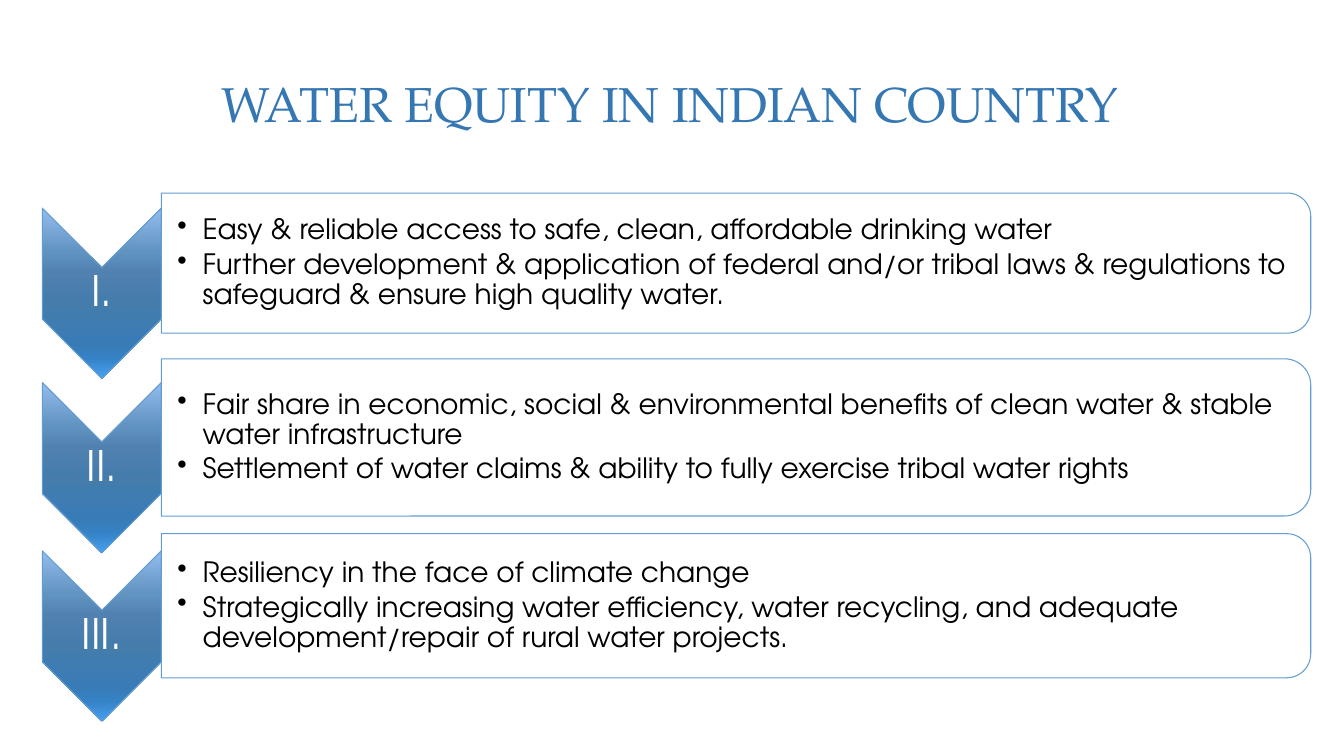
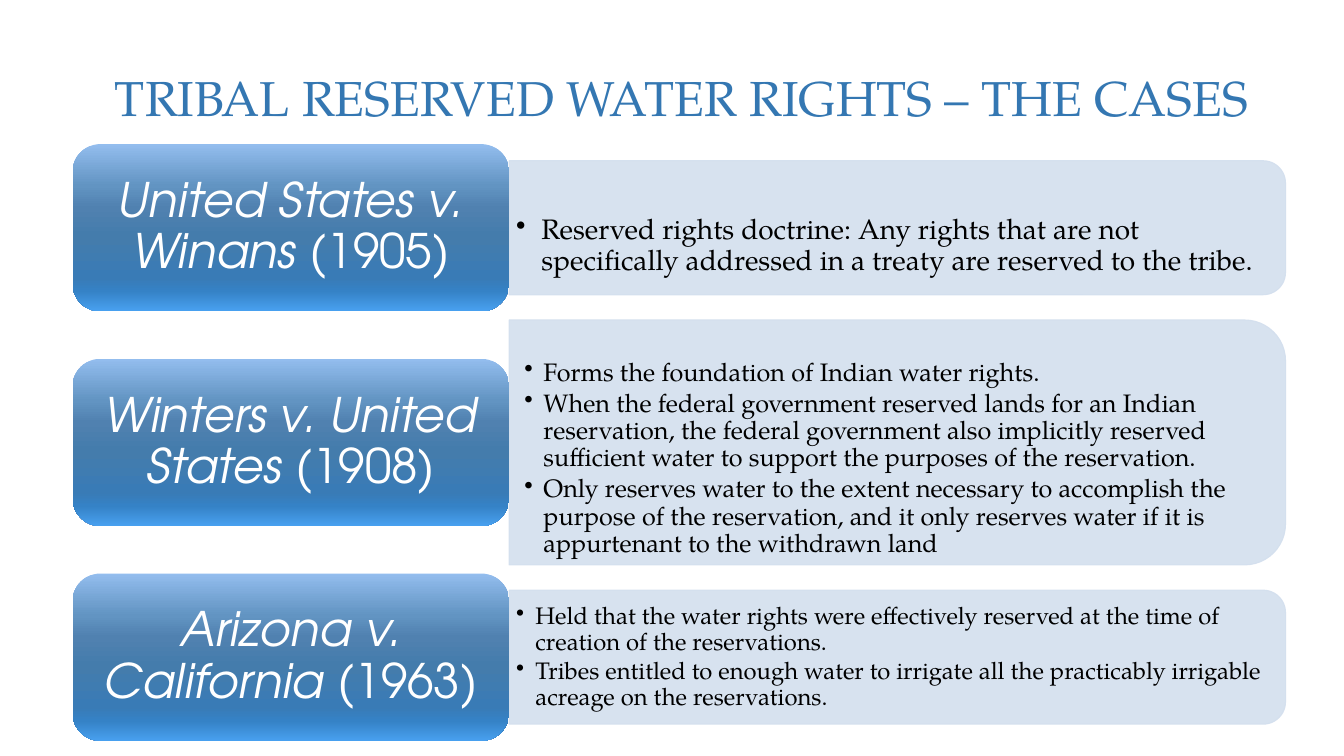
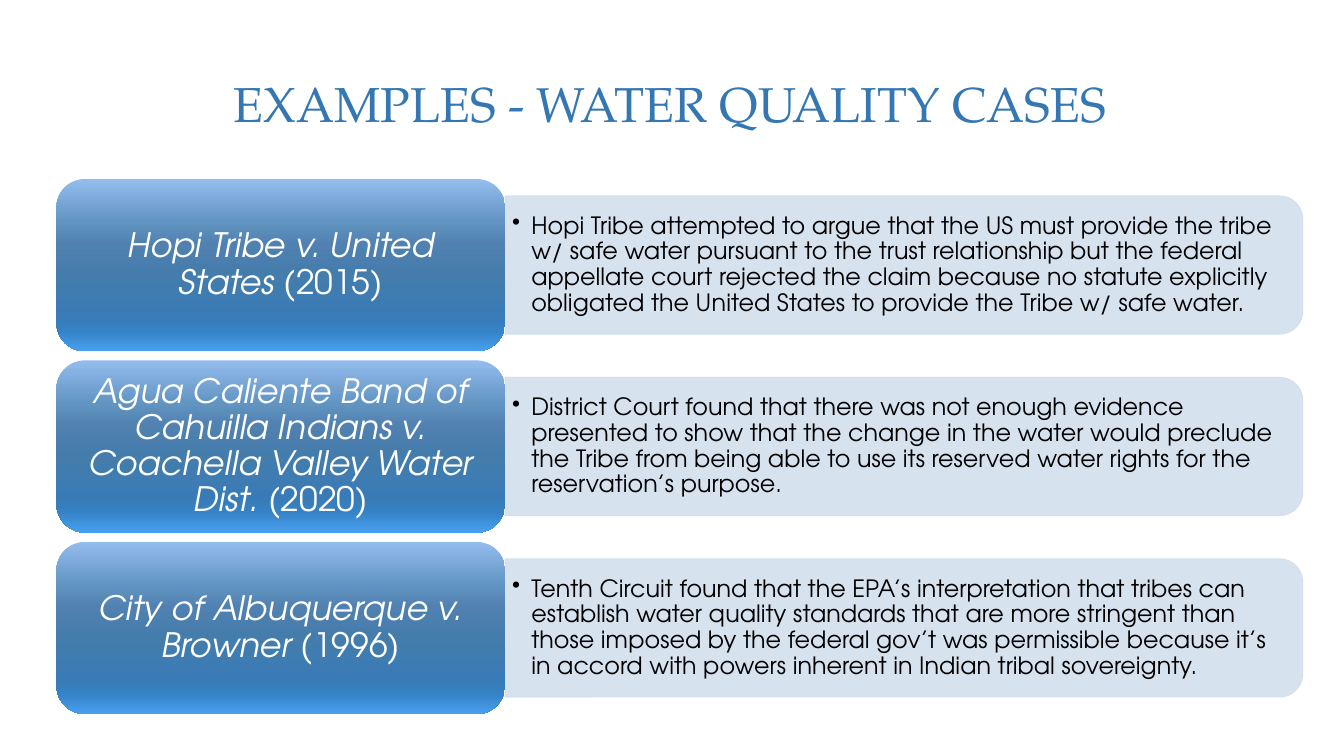
import pptx
import pptx.dml.color
import pptx.enum.shapes
import pptx.enum.text
import pptx.oxml
import pptx.oxml.ns
import pptx.util
from pptx.util import Inches

SHAPE = pptx.enum.shapes.MSO_SHAPE
ALIGN = pptx.enum.text.PP_ALIGN
MIDDLE = pptx.enum.text.MSO_ANCHOR.MIDDLE
SERIF, SANS = "TeX Gyre Pagella", "TeX Gyre Adventor"
COLORS = {"title": "3477B2", "white": "FFFFFF", "black": "000000",
          "outline": "629DD1", "pale": "D3DFEE"}
GRADIENT = {0: "93BDEE", 25: "6294C2", 38: "5081B0", 55: "447CAC",
            80: "397BB6", 88: "3582C6", 100: "48A0EF"}


def set_values(target, values):
    for name, value in values.items():
        setattr(target, name, value)


def rgb(name):
    return pptx.dml.color.RGBColor.from_string(COLORS[name])


class Builder:
    """Holds the deck, its style and the current slide."""

    def __init__(self):
        self.deck = pptx.Presentation()
        set_values(self.deck, {"slide_width": Inches(13.33), "slide_height": Inches(7.5)})
        self.page = None

    def start_page(self, title, left=0.62, top=0.45):
        self.page = self.deck.slides.add_slide(self.deck.slide_layouts[6])
        frame = self.text_box(left, top, 12.05, 1.14, (0.1, 0.05))
        self.fill_para(frame.paragraphs[0], [(title, False)], SERIF, 35, "title",
                       {"alignment": ALIGN.CENTER})

    # Text
    def prepare(self, frame, insets):
        side, edge = map(Inches, insets)
        set_values(frame, {"word_wrap": True, "vertical_anchor": MIDDLE,
                           "margin_left": side, "margin_right": side,
                           "margin_top": edge, "margin_bottom": edge})
        return frame

    def text_box(self, left, top, width, height, insets):
        box = self.page.shapes.add_textbox(*map(Inches, (left, top, width, height)))
        return self.prepare(box.text_frame, insets)

    def fill_para(self, para, parts, font, size, color, layout):
        set_values(para, layout)
        for text, italic in parts:
            span = para.add_run()
            span.text = text
            set_values(span.font, {"name": font, "size": pptx.util.Pt(size), "italic": italic})
            span.font.color.rgb = rgb(color)

    def add_label(self, frame, parts, size):
        self.fill_para(frame.paragraphs[0], parts, SANS, size, "white",
                       {"alignment": ALIGN.CENTER, "line_spacing": 0.9})

    def add_bullets(self, frame, items, font, size, indent):
        for index, item in enumerate(items):
            para = frame.add_paragraph() if index else frame.paragraphs[0]
            self.fill_para(para, [(item, False)], font, size, "black",
                           {"line_spacing": 0.9, "space_after": pptx.util.Pt(0.15 * size)})
            properties = para._p.get_or_add_pPr()
            properties.set("marL", str(Inches(indent)))
            properties.set("indent", str(-Inches(indent)))
            properties.append(pptx.oxml.parse_xml(
                f'<a:buChar {pptx.oxml.ns.nsdecls("a")} char="•"/>'))

    # Shapes
    def shape(self, kind, left, top, width, height, line=None):
        shape = self.page.shapes.add_shape(kind, *map(Inches, (left, top, width, height)))
        shape.shadow.inherit = False
        if line:
            shape.line.color.rgb = rgb(line)
            shape.line.width = pptx.util.Pt(0.75)
        else:
            shape.line.fill.background()
        return shape

    def turned_shape(self, kind, left, middle, width, height, line):
        """Place a quarter-turned shape by the area it covers once turned."""
        shape = self.shape(kind, left + (width - height) / 2, middle - width / 2,
                           height, width, line)
        shape.rotation = 90
        return shape

    def shade(self, shape):
        stops = "".join(f'<a:gs pos="{place * 1000}"><a:srgbClr val="{color}"/></a:gs>'
                        for place, color in GRADIENT.items())
        shape.fill.background()
        empty = shape._element.spPr.find(pptx.oxml.ns.qn("a:noFill"))
        empty.getparent().replace(empty, pptx.oxml.parse_xml(
            f'<a:gradFill {pptx.oxml.ns.nsdecls("a")} rotWithShape="0"><a:gsLst>{stops}</a:gsLst>'
            '<a:lin ang="5400000" scaled="0"/></a:gradFill>'))

    def panel(self, left, middle, width, height, fill, line, items, font, size,
              indent=0.19, insets=(0.07, 0.04), drop=0):
        shape = self.turned_shape(SHAPE.ROUND_2_SAME_RECTANGLE, left, middle,
                                  width, height, line)
        shape.fill.solid()
        shape.fill.fore_color.rgb = rgb(fill)
        for color in shape._element.spPr.iter(pptx.oxml.ns.qn("a:srgbClr")):
            if color.get("val") == COLORS[fill]:
                color.append(pptx.oxml.parse_xml(
                    f'<a:alpha {pptx.oxml.ns.nsdecls("a")} val="90000"/>'))
        corner = 0.05 * height
        frame = self.text_box(left, middle - height / 2 + corner + drop,
                              width - corner, height - 2 * corner, insets)
        self.add_bullets(frame, items, font, size, indent)

    def chevron(self, middle, numeral):
        left, width = 0.42, 1.18
        self.shade(self.turned_shape(SHAPE.CHEVRON, left, middle, width, 1.69, "outline"))
        frame = self.text_box(left, middle - 0.25, width, 0.5, (0.02, 0.02))
        self.add_label(frame, [(numeral, False)], 30)

    def case(self, left, middle, width, height, name, year, size, insets):
        shape = self.shape(SHAPE.ROUNDED_RECTANGLE, left, middle - height / 2, width, height)
        self.shade(shape)
        frame = self.prepare(shape.text_frame, insets)
        self.add_label(frame, [(name, True), (f" ({year})", False)], size)


def water_equity(builder):
    builder.start_page("WATER EQUITY IN INDIAN COUNTRY")
    goals = [
        ("I.", 2.61, 1.39, [
            "Easy & reliable access to safe, clean, affordable drinking water",
            "Further development & application of federal and/or tribal laws & regulations "
            "to safeguard & ensure high quality water."]),
        ("II.", 4.34, 1.56, [
            "Fair share in economic, social & environmental benefits of clean water & stable "
            "water infrastructure",
            "Settlement of water claims & ability to fully exercise tribal water rights"]),
        ("III.", 6.01, 1.43, [
            "Resiliency in the face of climate change",
            "Strategically increasing water efficiency, water recycling, and adequate "
            "development/repair of rural water projects."]),
    ]
    for numeral, middle, height, items in goals:
        builder.chevron(middle + 0.3, numeral)
        builder.panel(1.6, middle, 11.4, height, "white", "outline", items, SANS, 20,
                      indent=0.25, insets=(0.16, 0.01))


def reserved_rights(builder):
    builder.start_page("TRIBAL RESERVED WATER RIGHTS – THE CASES", 0.74, 0.39)
    cases = [
        ("United States v. Winans", 1905, 1.33, 20, {"indent": 0.25, "drop": 0.18}, [
            "Reserved rights doctrine: Any rights that are not specifically addressed in a "
            "treaty are reserved to the tribe."]),
        ("Winters v. United States", 1908, 2.43, 18, {"insets": (0.15, 0.07), "drop": 0.16}, [
            "Forms the foundation of Indian water rights.",
            "When the federal government reserved lands for an Indian reservation, the federal "
            "government also implicitly reserved sufficient water to support the purposes of "
            "the reservation.",
            "Only reserves water to the extent necessary to accomplish the purpose of the "
            "reservation, and it only reserves water if it is appurtenant to the withdrawn "
            "land"]),
        ("Arizona v. California", 1963, 1.33, 17, {}, [
            "Held that the water rights were effectively reserved at the time of creation of "
            "the reservations.",
            "Tribes entitled to enough water to irrigate all the practicably irrigable acreage "
            "on the reservations."]),
    ]
    for row, (name, year, height, size, options, items) in enumerate(cases):
        middle = 2.26 + 2.13 * row
        builder.panel(5.05, middle, 7.7, height, "pale", "pale", items, SERIF, size, **options)
        builder.case(0.72, middle, 4.33, 1.66, name, year, 34, (0.14, 0.07))


def quality_cases(builder):
    builder.start_page("EXAMPLES - WATER QUALITY CASES")
    cases = [
        ("Hopi Tribe v. United States", 2015,
         "Hopi Tribe attempted to argue that the US must provide the tribe w/ safe water "
         "pursuant to the trust relationship but the federal appellate court rejected the "
         "claim because no statute explicitly obligated the United States to provide the "
         "Tribe w/ safe water."),
        ("Agua Caliente Band of Cahuilla Indians v. Coachella Valley Water Dist.", 2020,
         "District Court found that there was not enough evidence presented to show that the "
         "change in the water would preclude the Tribe from being able to use its reserved "
         "water rights for the reservation’s purpose."),
        ("City of Albuquerque v. Browner", 1996,
         "Tenth Circuit found that the EPA’s interpretation that tribes can establish water "
         "quality standards that are more stringent than those imposed by the federal gov’t "
         "was permissible because it’s in accord with powers inherent in Indian tribal "
         "sovereignty."),
    ]
    for row, (name, year, finding) in enumerate(cases):
        middle = 2.63 + 1.8 * row
        builder.panel(5.01, middle, 7.91, 1.37, "pale", "pale", [finding], SANS, 17)
        builder.case(0.56, middle, 4.45, 1.71, name, year, 24, (0.1, 0.05))


def main():
    builder = Builder()
    water_equity(builder)
    reserved_rights(builder)
    quality_cases(builder)
    builder.deck.save("out.pptx")


if __name__ == "__main__":
    main()
